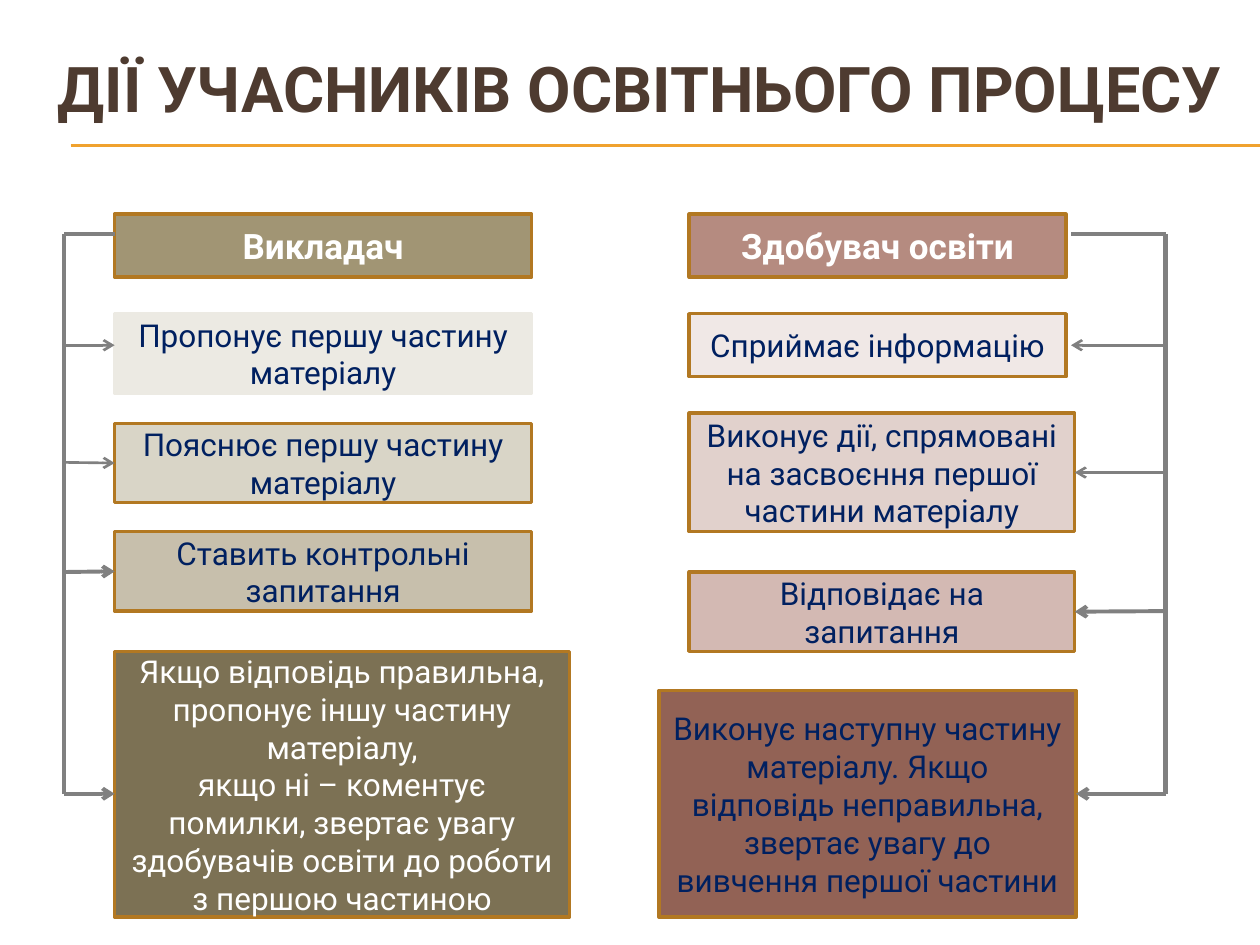
from pptx import Presentation, util as u
from pptx.dml.color import RGBColor
from pptx.enum import shapes, text
from pptx.oxml.ns import qn
from lxml import etree

FONT = "Roboto"
WHITE, NAVY, BROWN = "FFFFFF", "002060", "4E3B30"
GOLD, BORDER, GREY = "F0A22E", "B27822", "808080"
TITLE = "ДІЇ УЧАСНИКІВ ОСВІТНЬОГО ПРОЦЕСУ"
RAIL_TOP, RAIL_BOTTOM = 1.86, 6.3

# Box: (text, left, top, width, height, fill, border, text colour)
# Branch: (y, x at the box, line width), one for each box; the first has no arrowhead
COLUMNS = [
    {
        "rail": (0.51, 2.25), "side": 1,
        "boxes": [
            ("Викладач", 0.91, 1.7, 3.31, 0.5, "A19574", BORDER, WHITE),
            ("Пропонує першу частину матеріалу",
             0.91, 2.49, 3.31, 0.63, "ECEAE3", "ECEAE3", NAVY),
            ("Пояснює першу частину матеріалу",
             0.91, 3.36, 3.31, 0.63, "D9D5C7", BORDER, NAVY),
            ("Ставить контрольні запитання",
             0.91, 4.22, 3.31, 0.63, "C7BFAC", BORDER, NAVY),
            ("Якщо відповідь правильна, пропонує іншу частину матеріалу,\n"
             "якщо ні – коментує помилки, звертає увагу здобувачів освіти "
             "до роботи з першою частиною",
             0.91, 5.17, 3.61, 2.11, "7C7154", BORDER, WHITE),
        ],
        "branches": [(RAIL_TOP, 0.91, 2.25), (2.74, 0.91, 1.5), (3.67, 0.91, 1.5),
                     (4.54, 0.91, 2.25), (RAIL_BOTTOM, 0.91, 2.25)],
    },
    {
        "rail": (9.25, 3), "side": 3,
        "boxes": [
            ("Здобувач освіти", 5.47, 1.7, 2.99, 0.5, "B58B80", BORDER, WHITE),
            ("Сприймає інформацію", 5.47, 2.49, 2.99, 0.5, "F0E8E6", BORDER, NAVY),
            ("Виконує дії, спрямовані на засвоєння першої частини матеріалу",
             5.47, 3.28, 3.06, 0.94, "E1D1CC", BORDER, NAVY),
            ("Відповідає на запитання",
             5.47, 4.54, 3.06, 0.63, "D3B9B3", BORDER, NAVY),
            ("Виконує наступну частину матеріалу. Якщо відповідь неправильна, "
             "звертає увагу до вивчення першої частини",
             5.23, 5.48, 3.31, 1.8, "926255", BORDER, NAVY),
        ],
        "branches": [(RAIL_TOP, 8.5, 2.25), (2.74, 8.5, 1.5), (3.75, 8.54, 1.5),
                     (4.85, 8.54, 2.25), (RAIL_BOTTOM, 8.54, 2.25)],
    },
]


def color(value):
    return RGBColor.from_string(value)


def write(shape, content, size, text_color, bold=False):
    frame = shape.text_frame
    frame.word_wrap = True
    frame.vertical_anchor = text.MSO_ANCHOR.MIDDLE
    frame.text = content
    for paragraph in frame.paragraphs:
        paragraph.alignment = text.PP_ALIGN.CENTER
        for run in paragraph.runs:
            run.font.name, run.font.size = FONT, u.Pt(size)
            run.font.bold = bold
            run.font.color.rgb = color(text_color)


def add_box(slide, box, heading):
    content, left, top, width, height, fill, border, text_color = box
    shape = slide.shapes.add_shape(
        shapes.MSO_SHAPE.RECTANGLE, *map(u.Inches, (left, top, width, height)))
    shape.shadow.inherit = False
    shape.fill.solid()
    shape.fill.fore_color.rgb = color(fill)
    shape.line.color.rgb = color(border)
    shape.line.width = u.Pt(2)
    write(shape, content, 20 if heading else 18, text_color, heading)
    return shape


def add_line(slide, start, end, line_color, width, arrow=False):
    line = slide.shapes.add_connector(
        shapes.MSO_CONNECTOR.STRAIGHT, *map(u.Inches, start + end))
    line.line.color.rgb = color(line_color)
    line.line.width = u.Pt(width)
    if arrow:
        etree.SubElement(line.line._get_or_add_ln(), qn("a:tailEnd"), type="arrow")
    etree.SubElement(line._element.spPr, qn("a:effectLst"))
    return line


def add_column(slide, column):
    boxes = [add_box(slide, box, index == 0)
             for index, box in enumerate(column["boxes"])]

    # Vertical rail with a branch to each box
    rail_x, rail_width = column["rail"]
    add_line(slide, (rail_x, RAIL_TOP), (rail_x, RAIL_BOTTOM), GREY, rail_width)
    side = column["side"]
    for index, (y, x, width) in enumerate(column["branches"]):
        branch = add_line(slide, (rail_x, y), (x, y), GREY, width, index > 0)
        box = boxes[index]
        edge = box.left if side == 1 else box.left + box.width
        middle = box.top + box.height / 2
        # Join only the branches that meet the middle of the side
        if max(abs(edge - u.Inches(x)), abs(middle - u.Inches(y))) < u.Inches(0.02):
            branch.end_connect(box, side)


def main():
    presentation = Presentation()
    presentation.slide_width, presentation.slide_height = u.Inches(10), u.Inches(7.5)
    slide = presentation.slides.add_slide(presentation.slide_layouts[6])

    # Double rule and title
    for y in (1.15, 1.16):
        add_line(slide, (0.56, y), (10, y), GOLD, 0.75)
    title = slide.shapes.add_textbox(*map(u.Inches, (0.33, 0.23, 9.5, 0.92)))
    write(title, TITLE, 36, BROWN, True)

    # Teacher and learner columns
    for column in COLUMNS:
        add_column(slide, column)

    presentation.save("out.pptx")


if __name__ == "__main__":
    main()
